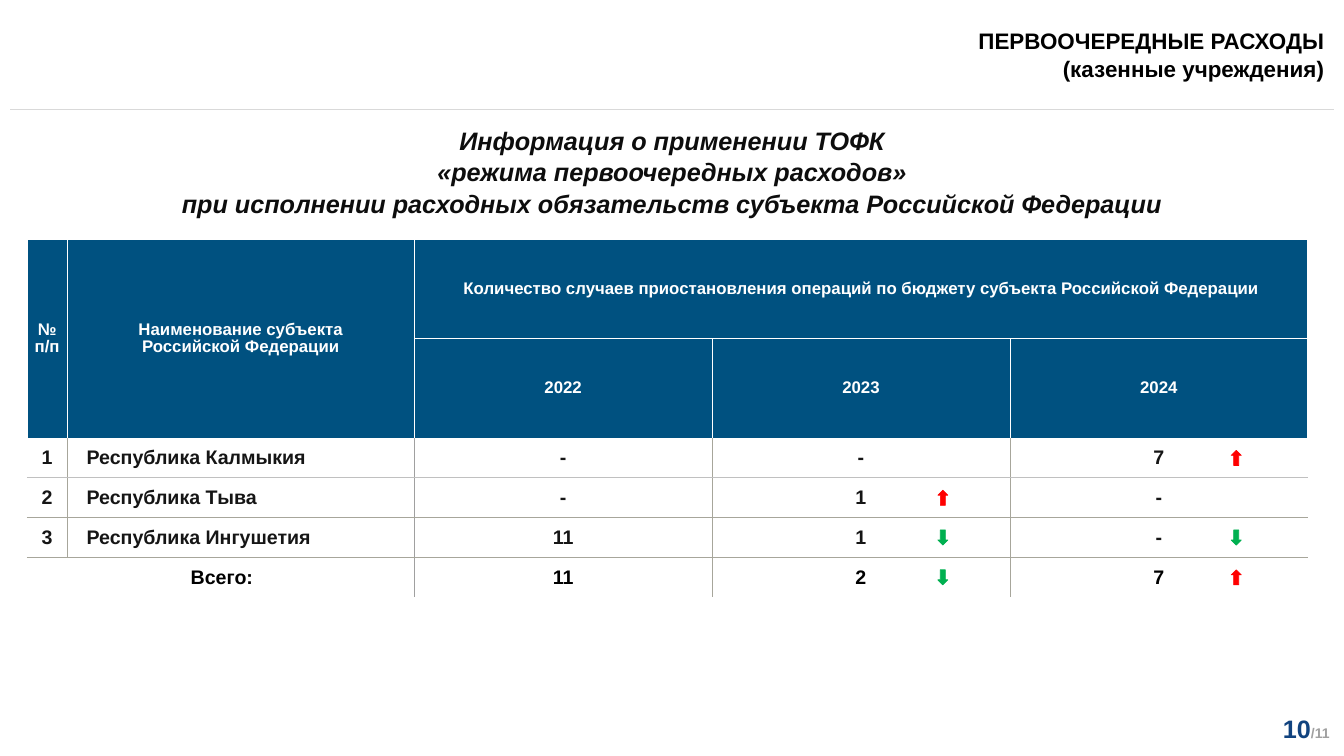
from dataclasses import dataclass

from pptx import Presentation
from pptx.dml.color import RGBColor
from pptx.enum.shapes import MSO_CONNECTOR, MSO_SHAPE
from pptx.enum.text import MSO_ANCHOR, PP_ALIGN
from pptx.oxml.ns import qn
from pptx.util import Inches, Pt
from lxml.etree import SubElement


@dataclass(frozen=True)
class Theme:
    font: str = "Arial"
    white: str = "FFFFFF"
    black: str = "000000"
    heading: str = "0D0D0D"
    body: str = "151515"
    header_fill: str = "005180"
    page: str = "11437F"
    muted: str = "A0A0A0"
    rule: str = "D9D9D9"
    grid: str = "A7A69B"
    grid_light: str = "C0C0C0"
    rise: str = "FF0000"
    fall: str = "00B050"
    title_size: int = 32
    heading_size: int = 36
    header_size: int = 24
    body_size: int = 28
    total_size: int = 20


theme = Theme()


def add_run(paragraph, text, size, color, italic=False):
    run = paragraph.add_run()
    run.text = text
    font = run.font
    font.name, font.size, font.bold, font.italic = theme.font, Pt(size), True, italic
    font.color.rgb = RGBColor.from_string(color)


def set_borders(cell, colors):
    """Draw 1 pt borders; colors are in the order left, right, top, bottom."""
    properties = cell._tc.get_or_add_tcPr()
    for index, (side, color) in enumerate(zip("LRTB", colors)):
        line = SubElement(properties, qn(f"a:ln{side}"), w=str(Pt(1)))
        fill = SubElement(line, qn("a:solidFill"))
        SubElement(fill, qn("a:srgbClr"), val=color)
        properties.insert(index, line)


presentation = Presentation()
presentation.slide_width, presentation.slide_height = Inches(26.67), Inches(15)
width, height = presentation.slide_width, presentation.slide_height
slide = presentation.slides.add_slide(presentation.slide_layouts[5])

# Title and the rule below it
title = slide.shapes.title
title.left, title.top, title.width, title.height = 0, 0, width, Inches(2.14)
frame = title.text_frame
frame.word_wrap = True
frame.vertical_anchor = MSO_ANCHOR.MIDDLE
frame.margin_left = frame.margin_top = frame.margin_bottom = 0
frame.margin_right = Inches(0.39)
paragraph = frame.paragraphs[0]
paragraph.alignment = PP_ALIGN.RIGHT
paragraph.line_spacing = 1.05
add_run(paragraph, "ПЕРВООЧЕРЕДНЫЕ РАСХОДЫ", theme.title_size, theme.black)
paragraph.add_line_break()
add_run(paragraph, "(казенные учреждения)", theme.title_size, theme.black)

rule_y, rule_inset = Inches(2.17), Inches(0.2)
rule = slide.shapes.add_connector(
    MSO_CONNECTOR.STRAIGHT, rule_inset, rule_y, width - rule_inset, rule_y)
rule.line.color.rgb = RGBColor.from_string(theme.rule)
rule.line.width = Pt(1)
SubElement(rule._element.spPr, qn("a:effectLst"))

# Heading above the table
left = Inches(0.54)
heading = slide.shapes.add_textbox(left, height * 0.16, width - 2 * left, height * 0.128)
frame = heading.text_frame
frame.word_wrap = True
heading_lines = [
    "Информация о применении ТОФК",
    "«режима первоочередных расходов»",
    "при исполнении расходных обязательств субъекта Российской Федерации",
]
for index, text in enumerate(heading_lines):
    paragraph = frame.add_paragraph() if index else frame.paragraphs[0]
    paragraph.alignment = PP_ALIGN.CENTER
    paragraph.line_spacing = 1.05
    add_run(paragraph, text, theme.heading_size, theme.heading, italic=True)

# Table: two tall header rows, then body rows of one unit each
top, unit = Inches(4.74), Inches(0.79)
column_widths = [unit] + [Inches(value) for value in (6.89, 5.91, 5.91, 5.91)]
row_heights = [round(2.5 * unit)] * 2 + [unit] * 4
header_rows = 2
total_row = len(row_heights) - 1
rows = [
    ["№ п/п", "Наименование субъекта\nРоссийской Федерации",
     "Количество случаев приостановления операций по бюджету субъекта Российской Федерации",
     "", ""],
    ["", "", "2022", "2023", "2024"],
    ["1", "Республика Калмыкия", "-", "-", "7"],
    ["2", "Республика Тыва", "-", "1", "-"],
    ["3", "Республика Ингушетия", "11", "1", "-"],
    ["Всего:", "", "11", "2", "7"],
]
table = slide.shapes.add_table(
    len(rows), len(column_widths), left, top, sum(column_widths), sum(row_heights)).table
table.first_row = table.horz_banding = False
for column, column_width in zip(table.columns, column_widths):
    column.width = column_width
for row, row_height in zip(table.rows, row_heights):
    row.height = row_height
for first, last in [((0, 0), (1, 0)), ((0, 1), (1, 1)), ((0, 2), (0, 4)), ((5, 0), (5, 1))]:
    table.cell(*first).merge(table.cell(*last))

column_edges = [theme.white, theme.grid, theme.muted, theme.grid, theme.grid, theme.white]
row_edges = [theme.white] * 3 + [theme.grid_light, theme.grid, theme.grid, theme.white]
for row_index, texts in enumerate(rows):
    is_header = row_index < header_rows
    size = theme.header_size if is_header else theme.body_size
    color = theme.white if is_header else theme.black if row_index == total_row else theme.body
    edges = [theme.white] * len(column_edges) if is_header else column_edges
    for column_index, text in enumerate(texts):
        cell = table.cell(row_index, column_index)
        cell.fill.solid()
        cell.fill.fore_color.rgb = RGBColor.from_string(
            theme.header_fill if is_header else theme.white)
        if cell.is_spanned:
            continue
        right = column_index + (cell.span_width if cell.is_merge_origin else 1)
        bottom = row_index + (cell.span_height if cell.is_merge_origin else 1)
        set_borders(cell, [edges[column_index], edges[right],
                           row_edges[row_index], row_edges[bottom]])
        is_name = column_index == 1 and not is_header
        is_total = row_index == total_row and column_index == 0
        cell.vertical_anchor = MSO_ANCHOR.MIDDLE
        cell.margin_left = Inches(0.39 if is_name else 0.01)
        cell.margin_right = Inches(3.2 if is_total else 0.01)
        cell.margin_top, cell.margin_bottom = Inches(0.01), 0
        frame = cell.text_frame
        for index, line in enumerate(text.split("\n")):
            paragraph = frame.add_paragraph() if index else frame.paragraphs[0]
            paragraph.alignment = (PP_ALIGN.LEFT if is_name else
                                   PP_ALIGN.RIGHT if is_total else PP_ALIGN.CENTER)
            if is_header:
                paragraph.line_spacing = 0.93
            add_run(paragraph, line, size, color)

# Trend arrows, centred on their rows at a share of the column's width
arrow_width, arrow_height = Inches(0.2), Inches(0.3)
arrow_shares = {3: 0.775, 4: 0.76}
trends = [(2, 4, "rise"), (3, 3, "rise"), (4, 3, "fall"),
          (4, 4, "fall"), (5, 3, "fall"), (5, 4, "rise")]
for row_index, column_index, trend in trends:
    center_x = (left + sum(column_widths[:column_index])
                + arrow_shares[column_index] * column_widths[column_index])
    center_y = top + sum(row_heights[:row_index]) + row_heights[row_index] / 2
    arrow = slide.shapes.add_shape(
        MSO_SHAPE.DOWN_ARROW, round(center_x - arrow_width / 2),
        round(center_y - arrow_height / 2), arrow_width, arrow_height)
    arrow.shadow.inherit = False
    arrow.rotation = 180 if trend == "rise" else 0
    color = RGBColor.from_string(theme.rise if trend == "rise" else theme.fall)
    arrow.fill.solid()
    arrow.fill.fore_color.rgb = color
    arrow.line.color.rgb = color
    arrow.line.width = Pt(1)

# Page number
page = slide.shapes.add_textbox(
    round(width * 0.922), round(height * 0.94), round(width * 0.071), round(height * 0.047))
page.text_frame.word_wrap = True
paragraph = page.text_frame.paragraphs[0]
paragraph.alignment = PP_ALIGN.RIGHT
add_run(paragraph, "10", theme.heading_size, theme.page)
add_run(paragraph, "/11", theme.total_size, theme.muted)

presentation.save("out.pptx")
